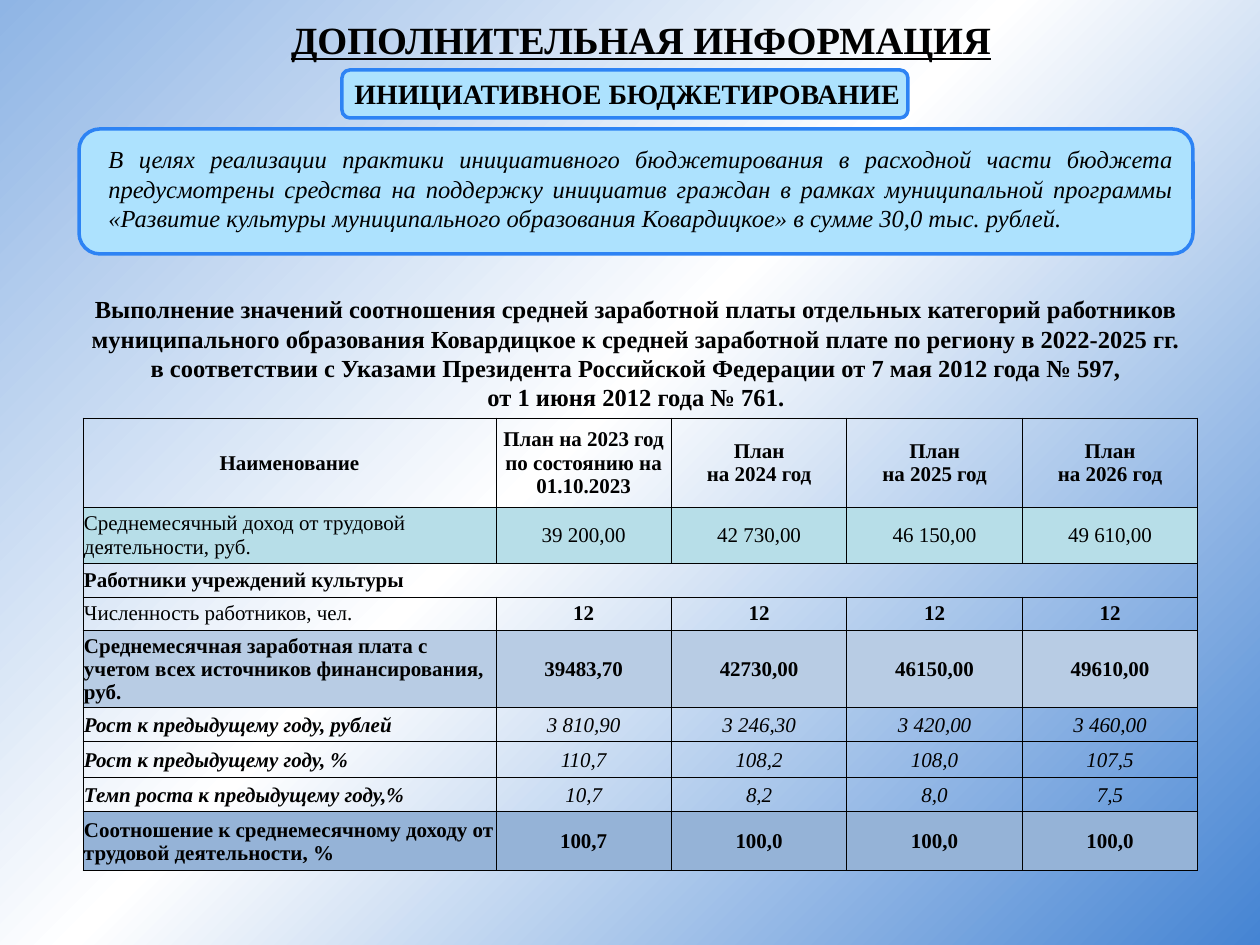
from lxml import etree
from pptx import Presentation
from pptx import util as u
from pptx.dml.color import RGBColor
from pptx.enum import shapes, text
from pptx.oxml.ns import qn

FONT = "Times New Roman"
LEFT, CENTER, JUSTIFY = text.PP_ALIGN.LEFT, text.PP_ALIGN.CENTER, text.PP_ALIGN.JUSTIFY

BUDGET_NOTE = (
    "В целях реализации практики инициативного бюджетирования в расходной части бюджета "
    "предусмотрены средства на поддержку инициатив граждан в рамках муниципальной программы "
    "«Развитие культуры муниципального образования Ковардицкое» в сумме 30,0 тыс. рублей."
)
TABLE_HEADING = (
    "Выполнение значений соотношения средней заработной платы отдельных категорий работников "
    "муниципального образования Ковардицкое к средней заработной плате по региону в 2022-2025 гг. "
    "в соответствии с Указами Президента Российской Федерации от 7 мая 2012 года № 597,\n"
    "от 1 июня 2012 года № 761."
)
HEADER = ["Наименование", "План на 2023 год по состоянию на 01.10.2023",
          "План\nна 2024 год", "План\nна 2025 год", "План\nна 2026 год"]
INCOME = ["Среднемесячный доход от трудовой деятельности, руб.",
          "39 200,00", "42 730,00", "46 150,00", "49 610,00"]
STAFF = ["Численность работников, чел.", "12", "12", "12", "12"]
SALARY = ["Среднемесячная заработная плата с учетом всех источников финансирования, руб.",
          "39483,70", "42730,00", "46150,00", "49610,00"]
GROWTH_RUB = ["Рост к предыдущему году, рублей", "3 810,90", "3 246,30", "3 420,00", "3 460,00"]
GROWTH_PCT = ["Рост к предыдущему году, %", "110,7", "108,2", "108,0", "107,5"]
GROWTH_RATE = ["Темп роста к предыдущему году,%", "10,7", "8,2", "8,0", "7,5"]
RATIO = ["Соотношение к среднемесячному доходу от трудовой деятельности, %",
         "100,7", "100,0", "100,0", "100,0"]
ROWS = [
    (89, HEADER, None, "b", "b"),
    (56, INCOME, "B7DEE8", "", ""),
    (34, ["Работники учреждений культуры"], None, "b", "b"),
    (33, STAFF, None, "", "b"),
    (78, SALARY, "B8CCE4", "b", "b"),
    (34, GROWTH_RUB, None, "bi", "i"),
    (36, GROWTH_PCT, None, "bi", "i"),
    (34, GROWTH_RATE, None, "bi", "i"),
    (59, RATIO, "95B3D7", "b", "b"),
]


def px(n):
    """Convert slide pixels to EMU."""
    return u.Emu(round(n * 914400 / 126))


def color(value):
    """Turn a hex string into a colour."""
    return RGBColor.from_string(value)


def write(tf, content, size, align, style=""):
    """Fill a text frame, with b, i and u in style for bold, italic and underline."""
    tf.text = content
    for p in tf.paragraphs:
        p.alignment = align
        for r in p.runs:
            f = r.font
            f.name, f.size, f.color.rgb = FONT, u.Pt(size), color("000000")
            f.bold, f.italic, f.underline = "b" in style, "i" in style, "u" in style


def text_box(s, box, content, size, align, style, anchor=text.MSO_ANCHOR.TOP):
    """Add a wrapping text box."""
    tf = s.shapes.add_textbox(*map(px, box)).text_frame
    tf.word_wrap = True
    tf.vertical_anchor = anchor
    write(tf, content, size, align, style)


def panel(s, box, text_inset, content, size, style):
    """Add a rounded panel whose text box is offset and resized by text_inset."""
    sp = s.shapes.add_shape(shapes.MSO_SHAPE.ROUNDED_RECTANGLE, *map(px, box))
    sp.shadow.inherit = False
    sp.fill.solid()
    sp.fill.fore_color.rgb = color("ADE2FE")
    sp.line.color.rgb = color("2D83F4")
    sp.line.width = u.Pt(2)
    text_area = [a + b for a, b in zip(box, text_inset)]
    text_box(s, text_area, content, size, JUSTIFY, style)


def border(cell):
    """Draw thin black lines on all sides of a cell."""
    pr = cell._tc.get_or_add_tcPr()
    for side in ("a:lnL", "a:lnR", "a:lnT", "a:lnB"):
        ln = etree.SubElement(pr, qn(side), w=str(u.Pt(0.5)))
        fill = etree.SubElement(ln, qn("a:solidFill"))
        etree.SubElement(fill, qn("a:srgbClr"), val="000000")


def salary_table(s, box, label_width):
    """Add the salary table with one wide label column and equal year columns."""
    tbl = s.shapes.add_table(len(ROWS), len(HEADER), *map(px, box)).table
    tbl.first_row = tbl.horz_banding = False
    years = len(HEADER) - 1
    for i, col in enumerate(tbl.columns):
        col.width = px((box[2] - label_width) / years if i else label_width)
    for i, (height, values, fill, label_style, value_style) in enumerate(ROWS):
        tbl.rows[i].height = px(height)
        for j in range(len(HEADER)):
            cell = tbl.cell(i, j)
            border(cell)
            cell.margin_left = cell.margin_right = cell.margin_top = px(1)
            cell.margin_bottom = 0
            cell.vertical_anchor = text.MSO_ANCHOR.MIDDLE
            if fill:
                cell.fill.solid()
                cell.fill.fore_color.rgb = color(fill)
            else:
                cell.fill.background()
            if j < len(values):
                align = CENTER if i == 0 or j else LEFT
                write(cell.text_frame, values[j], 12, align, value_style if j else label_style)
        if len(values) == 1:
            tbl.cell(i, 0).merge(tbl.cell(i, years))


def background(s):
    """Give the slide a gradient that spreads from its lower right corner."""
    s.background.fill.gradient()
    grad = s.element.find(".//" + qn("a:gradFill"))
    for child in list(grad):
        grad.remove(child)
    stops = etree.SubElement(grad, qn("a:gsLst"))
    for pos, value in ((0, "4584D3"), (54, "FFFFFF"), (100, "8FB5E5")):
        gs = etree.SubElement(stops, qn("a:gs"), pos=str(pos * 1000))
        etree.SubElement(gs, qn("a:srgbClr"), val=value)
    spread = etree.SubElement(grad, qn("a:path"), path="circle")
    etree.SubElement(spread, qn("a:fillToRect"), l="100000", t="100000")


def main():
    """Build the slide and save it."""
    prs = Presentation()
    prs.slide_width, prs.slide_height = px(1260), px(945)
    s = prs.slides.add_slide(prs.slide_layouts[6])
    background(s)
    text_box(s, (74, 17, 1134, 45), "ДОПОЛНИТЕЛЬНАЯ ИНФОРМАЦИЯ", 22, CENTER, "bu",
             text.MSO_ANCHOR.MIDDLE)
    text_box(s, (79, 288, 1114, 131), TABLE_HEADING, 14, CENTER, "b")
    salary_table(s, (83, 418, 1115, 453), 413)
    panel(s, (79, 129, 1114, 125), (17, 9, -24, -23), BUDGET_NOTE, 14, "i")
    panel(s, (342, 70, 566, 48), (0, 0, 20, -1), "ИНИЦИАТИВНОЕ БЮДЖЕТИРОВАНИЕ", 16, "b")
    prs.save("out.pptx")


if __name__ == "__main__":
    main()
